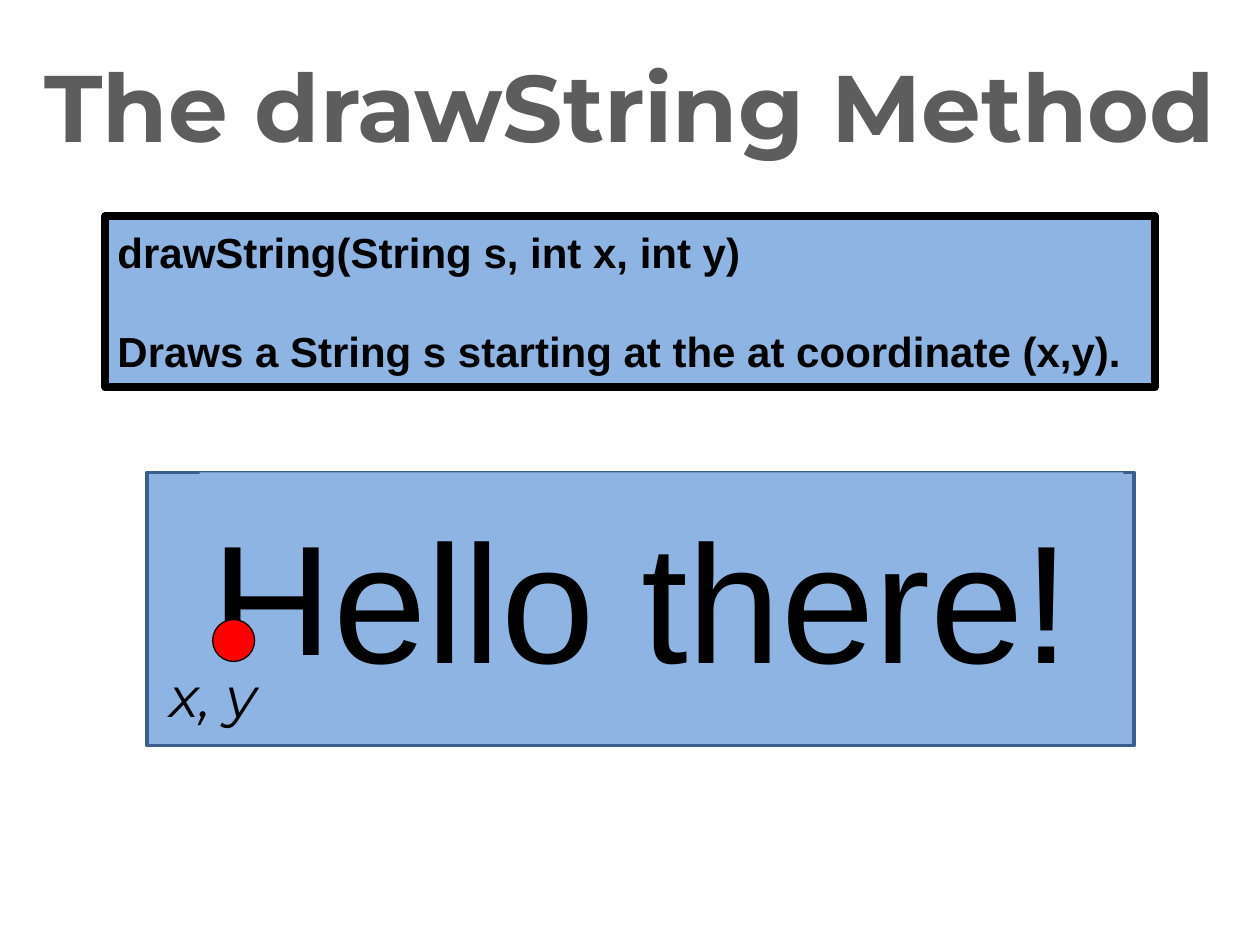
import pptx
import pptx.util
import pptx.dml.color
import pptx.enum.shapes
import pptx.enum.text

COLORS = {"title": "5D5D5D", "panel": "8EB4E3", "edge": "3A5F8C",
          "ink": "000000", "point": "FF0000"}
KINDS = pptx.enum.shapes.MSO_SHAPE
ANCHORS = pptx.enum.text.MSO_ANCHOR
ALIGNMENTS = pptx.enum.text.PP_ALIGN

presentation = pptx.Presentation()
presentation.slide_width = pptx.util.Inches(10)
presentation.slide_height = pptx.util.Inches(7.5)
slide = presentation.slides.add_slide(presentation.slide_layouts[6])

# Grid of 120 columns by 90 rows
COLUMN = presentation.slide_width / 120
ROW = presentation.slide_height / 90


def add_block(kind, left, top, width, height, fill=None, line=None, line_width=0):
    shape = slide.shapes.add_shape(kind, int(left * COLUMN), int(top * ROW),
                                   int(width * COLUMN), int(height * ROW))
    shape.shadow.inherit = False
    if fill:
        shape.fill.solid()
        shape.fill.fore_color.rgb = pptx.dml.color.RGBColor.from_string(COLORS[fill])
    else:
        shape.fill.background()
    if line:
        shape.line.color.rgb = pptx.dml.color.RGBColor.from_string(COLORS[line])
        shape.line.width = pptx.util.Pt(line_width)
    else:
        shape.line.fill.background()
    return shape


def write(shape, lines, size, font, color="ink", bold=False, italic=False,
          alignment=ALIGNMENTS.LEFT, anchor=ANCHORS.TOP, inset=0.05, gap=0):
    frame = shape.text_frame
    frame.word_wrap = True
    frame.vertical_anchor = anchor
    frame.margin_top = pptx.util.Inches(inset)
    for index, text in enumerate(lines):
        paragraph = frame.add_paragraph() if index else frame.paragraphs[0]
        paragraph.alignment = alignment
        if index:
            paragraph.space_before = pptx.util.Pt(gap)
        run = paragraph.add_run()
        run.text = text
        run.font.size = pptx.util.Pt(size)
        run.font.name = font
        run.font.bold = bold
        run.font.italic = italic
        run.font.color.rgb = pptx.dml.color.RGBColor.from_string(COLORS[color])


# Title
title = slide.shapes.add_textbox(0, 0, presentation.slide_width, int(20 * ROW))
write(title, ["The drawString Method"], 54, "Montserrat", color="title", bold=True,
      alignment=ALIGNMENTS.CENTER, anchor=ANCHORS.MIDDLE)

# Method signature and description
signature = add_block(KINDS.RECTANGLE, 10, 20.6, 100, 16.3, "panel", "ink", 4.5)
write(signature, ["drawString(String s, int x, int y)",
                  "Draws a String s starting at the at coordinate (x,y)."],
      24, "Arial", bold=True, inset=0.08, gap=28)

# Drawing panel with the sample string
add_block(KINDS.RECTANGLE, 14, 45, 94, 26, "panel", "edge", 2)
sample = add_block(KINDS.RECTANGLE, 19, 45, 88, 20.4, "panel")
write(sample, ["Hello there!"], 96, "Arial", inset=0.18)

# Starting coordinate
coordinate = add_block(KINDS.RECTANGLE, 15, 62.4, 16, 7.5, "panel")
write(coordinate, ["x, y"], 32, "Montserrat", italic=True)
add_block(KINDS.OVAL, 20.25, 59, 4, 4, "point", "ink", 0.75)

presentation.save("out.pptx")
